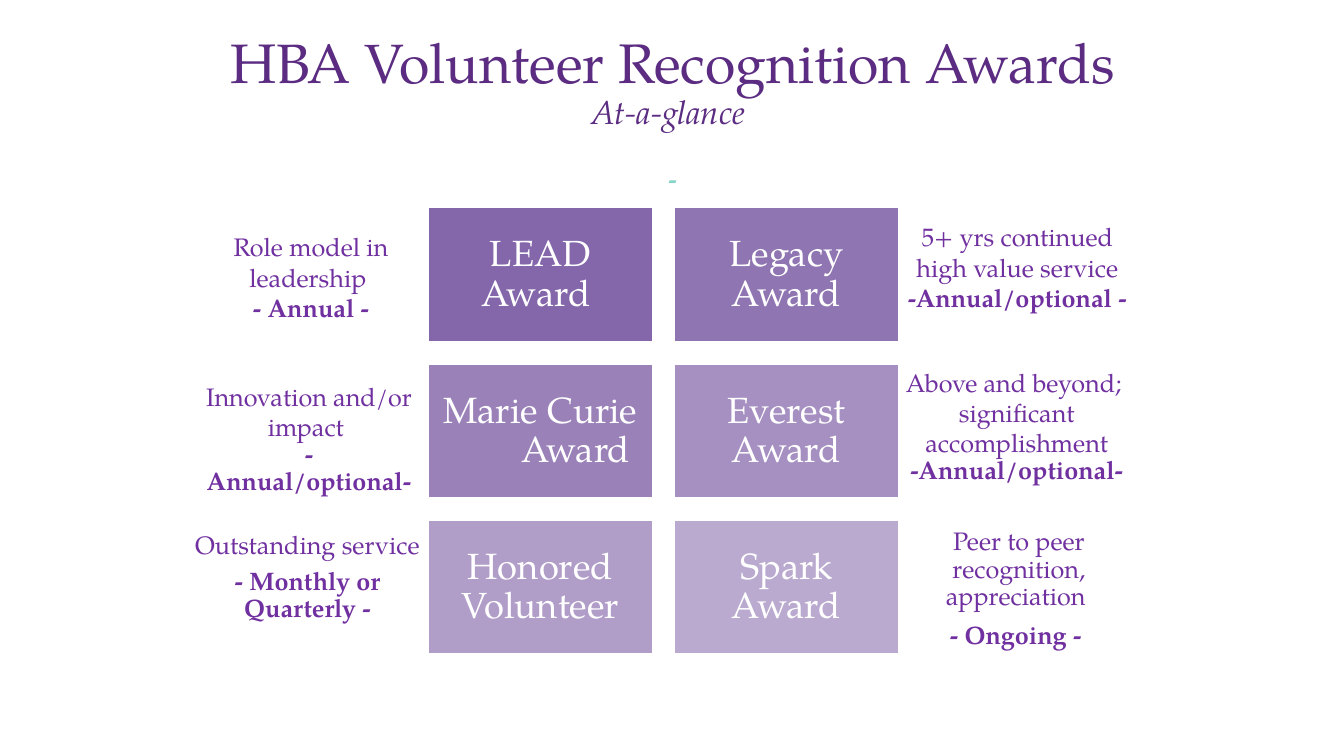
from pptx import Presentation
from pptx.dml.color import RGBColor
from pptx.enum.shapes import MSO_SHAPE as Preset
from pptx.enum.text import MSO_ANCHOR as Anchor, PP_ALIGN as Align
from pptx.oxml.ns import qn
from pptx.util import Inches, Pt
from lxml.etree import SubElement

FONT = "TeX Gyre Pagella"
TIGHT = {"line_spacing": 0.9}
SPACED = {"space_after": Pt(6)}
TIGHT_SPACED = {**TIGHT, **SPACED}

AWARDS = [
    ["LEAD Award "], ["Legacy Award"],
    ["Marie Curie", "Award"], ["Everest Award"],
    ["Honored Volunteer"], ["Spark Award"],
]

# Each note: box, then paragraphs of (plain text, bold text, paragraph format)
NOTES = [
    ((1.8, 2.25, 2.57, 1.01), [
        ("Role model in leadership ", "", {}),
        ("", "- Annual -", {})]),
    ((1.89, 3.73, 2.35, 1.16), [
        ("Innovation and/or", "", {}),
        ("impact ", "", {}),
        ("", "- Annual/optional-", TIGHT_SPACED)]),
    ((1.73, 5.24, 2.64, 1.04), [
        ("Outstanding service", "", TIGHT_SPACED),
        ("", "- Monthly or Quarterly -", TIGHT_SPACED)]),
    ((8.9, 2.15, 2.38, 1.09), [
        ("5+ yrs continued high value service ", "-Annual/optional - ", {})]),
    ((8.82, 3.59, 2.53, 1.3), [
        ("Above and beyond; ", "", {}),
        ("significant accomplishment", "", {}),
        ("", "-Annual/optional-", TIGHT_SPACED)]),
    ((8.78, 5.2, 2.65, 1.54), [
        ("Peer to peer recognition, appreciation ", "", TIGHT_SPACED),
        ("", "- Ongoing - ", SPACED)]),
]


def color(hex_text):
    return RGBColor.from_string(hex_text)


def set_all(target, values):
    for name, value in values.items():
        setattr(target, name, value)


def add_box(page, box, anchor=Anchor.TOP):
    frame = page.shapes.add_textbox(*map(Inches, box)).text_frame
    set_all(frame, {"word_wrap": True, "vertical_anchor": anchor})
    return frame


def add_para(frame, first, values):
    para = frame.paragraphs[0] if first else frame.add_paragraph()
    set_all(para, {"alignment": Align.CENTER, **values})
    return para


def add_span(para, text, size, hex_text, **values):
    span = para.add_run()
    span.text = text
    set_all(span.font, {"name": FONT, "size": Pt(size), **values})
    span.font.color.rgb = color(hex_text)


def add_title(page, box):
    para = add_para(add_box(page, box, Anchor.MIDDLE), True, TIGHT)
    add_span(para, "HBA Volunteer Recognition Awards", 39.6, "5B2C82")
    para.add_line_break()
    add_span(para, "At-a-glance ", 23.4, "5B2C82", italic=True)


def add_dash(page, box):
    para = add_para(add_box(page, box), True, TIGHT)
    add_span(para, "-", 18, "86D5C8", bold=True)


def add_award(page, box, lines, opacity):
    card = page.shapes.add_shape(Preset.RECTANGLE, *map(Inches, box))
    card.shadow.inherit = False
    card.fill.solid()
    card.fill.fore_color.rgb = color("7757A1")
    fill_color = card.fill._xPr.find(qn("a:solidFill"))[0]
    SubElement(fill_color, qn("a:alpha"), val=str(opacity * 1000))
    card.line.color.rgb = color("FFFFFF")
    card.line.width = Pt(1)
    frame = card.text_frame
    inset = Inches(0.11)
    set_all(frame, {"word_wrap": True, "vertical_anchor": Anchor.MIDDLE,
                    "margin_left": inset, "margin_right": inset,
                    "margin_top": inset, "margin_bottom": inset})
    for index, line in enumerate(lines):
        para = add_para(frame, index == 0, TIGHT)
        if index:
            para._p.get_or_add_pPr().set("marL", str(Inches(0.7)))
        add_span(para, line, 26, "FFFFFF")


def add_award_grid(page, left, top):
    """Two columns of cards that grow paler from first to last."""
    width, height, step_x, step_y = 2.22, 1.33, 2.44, 1.55
    for index, lines in enumerate(AWARDS):
        row, column = divmod(index, 2)
        box = (left + column * step_x, top + row * step_y, width, height)
        add_award(page, box, lines, 90 - 8 * index)


def add_note(page, box, paragraphs):
    frame = add_box(page, box)
    for index, (plain, bold, values) in enumerate(paragraphs):
        para = add_para(frame, index == 0, values)
        if plain:
            add_span(para, plain, 18, "7030A0")
        if bold:
            add_span(para, bold, 18, "7030A0", bold=True)


def main():
    deck = Presentation()
    deck.slide_width, deck.slide_height = Inches(13.33), Inches(7.5)
    page = deck.slides.add_slide(deck.slide_layouts[6])
    add_dash(page, (0.91, 1.61, 11.52, 0.4))
    add_title(page, (0.92, 0.4, 11.5, 0.86))
    add_award_grid(page, 4.25, 2.06)
    for box, paragraphs in NOTES:
        add_note(page, box, paragraphs)
    deck.save("out.pptx")


if __name__ == "__main__":
    main()
